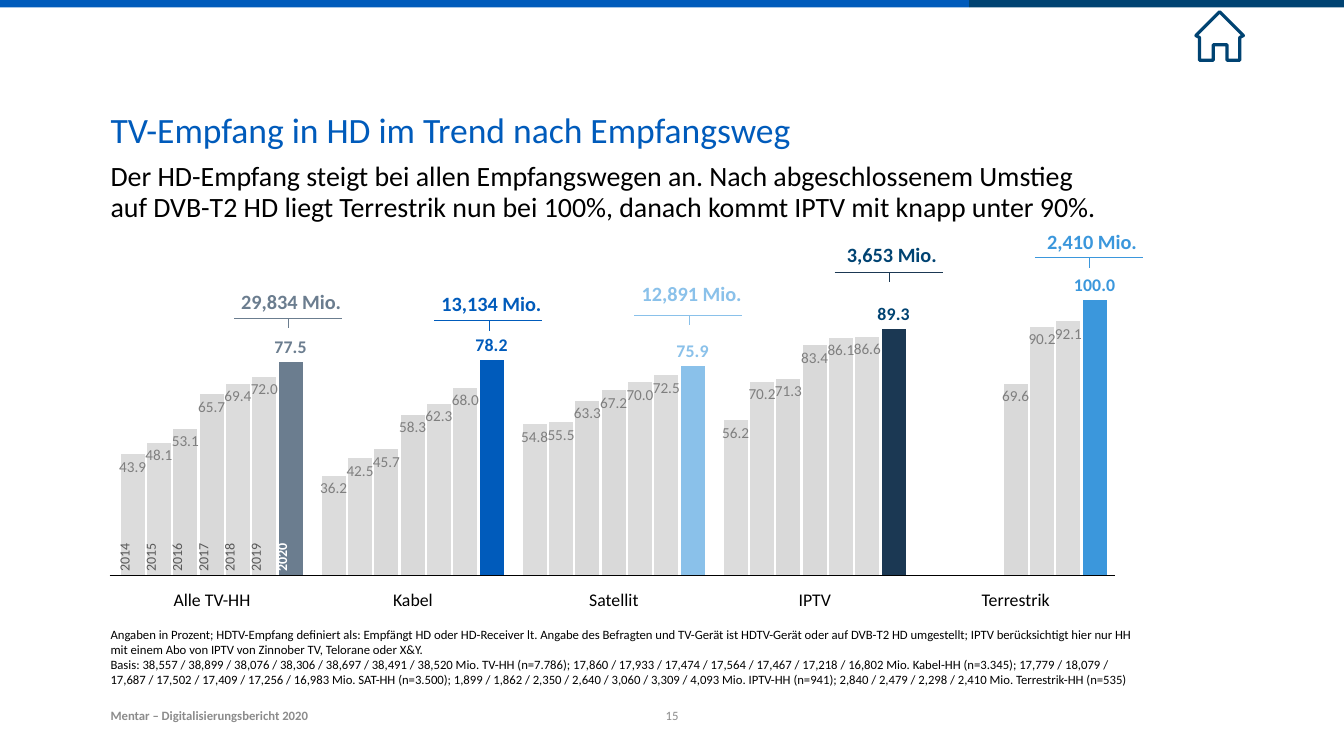
from lxml import etree
from pptx import Presentation
from pptx.chart.data import CategoryChartData
from pptx.dml.color import RGBColor
from pptx.enum.chart import XL_CHART_TYPE, XL_LABEL_POSITION
from pptx.enum.shapes import MSO_CONNECTOR, MSO_SHAPE
from pptx.enum.text import MSO_ANCHOR, PP_ALIGN
from pptx.oxml import parse_xml
from pptx.oxml.ns import nsdecls, qn
from pptx.util import Inches, Pt

FONT = "Calibri"
NO_STYLE_NO_GRID = "{2D5ABB26-0587-4C30-8999-92F81FD0307C}"
BLACK = RGBColor(0x00, 0x00, 0x00)
WHITE = RGBColor(0xFF, 0xFF, 0xFF)
BLUE = RGBColor(0x00, 0x5B, 0xBB)
NAVY = RGBColor(0x00, 0x43, 0x72)
DARK_NAVY = RGBColor(0x1B, 0x38, 0x53)
SLATE = RGBColor(0x6B, 0x7D, 0x8F)
LIGHT_BLUE = RGBColor(0x8A, 0xC1, 0xEA)
SKY_BLUE = RGBColor(0x3B, 0x97, 0xDC)
BAR_GRAY = RGBColor(0xDC, 0xDC, 0xDC)
BAR_GRAY_DARK = RGBColor(0xD9, 0xD9, 0xD9)
LABEL_GRAY = RGBColor(0x7F, 0x7F, 0x7F)
YEAR_GRAY = RGBColor(0x59, 0x59, 0x59)
FOOTER_GRAY = RGBColor(0x8C, 0x8C, 0x8C)

RECEPTION_WAYS = ["Alle TV-HH", "Kabel", "Satellit", "IPTV", "Terrestrik"]
HD_SHARES = {
    "2014": (43.9, 36.2, 54.8, 56.2, None),
    "2015": (48.1, 42.5, 55.5, 70.2, None),
    "2016": (53.1, 45.7, 63.3, 71.3, None),
    "2017": (65.7, 58.3, 67.2, 83.4, 69.6),
    "2018": (69.4, 62.3, 70.0, 86.1, 90.2),
    "2019": (72.0, 68.0, 72.5, 86.6, 92.1),
    "2020": (77.5, 78.2, 75.9, 89.3, 100.0),
}
# text, text top, line height, text colour, line colour
CALLOUTS = [
    ("29,834 Mio.", 3.11, 3.48, SLATE, SLATE),
    ("13,134 Mio.", 3.14, 3.51, BLUE, BLUE),
    ("12,891 Mio.", 3.03, 3.45, LIGHT_BLUE, LIGHT_BLUE),
    ("3,653 Mio.", 2.60, 2.98, NAVY, DARK_NAVY),
    ("2,410 Mio.", 2.46, 2.82, SKY_BLUE, SKY_BLUE),
]
SUBTITLE = (
    "Der HD-Empfang steigt bei allen Empfangswegen an. Nach abgeschlossenem Umstieg "
    "auf DVB-T2 HD liegt Terrestrik nun bei 100%, danach kommt IPTV mit knapp unter 90%."
)
FOOTNOTE = (
    "Angaben in Prozent; HDTV-Empfang definiert als: Empfängt HD oder HD-Receiver lt. Angabe des "
    "Befragten und TV-Gerät ist HDTV-Gerät oder auf DVB-T2 HD umgestellt; IPTV berücksichtigt hier "
    "nur HH mit einem Abo von IPTV von Zinnober TV, Telorane oder X&Y.\n"
    "Basis: 38,557 / 38,899 / 38,076 / 38,306 / 38,697 / 38,491 / 38,520 Mio. TV-HH (n=7.786); "
    "17,860 / 17,933 / 17,474 / 17,564 / 17,467 / 17,218 / 16,802 Mio. Kabel-HH (n=3.345); "
    "17,779 / 18,079 / 17,687 / 17,502 / 17,409 / 17,256 / 16,983 Mio. SAT-HH (n=3.500); "
    "1,899 / 1,862 / 2,350 / 2,640 / 3,060 / 3,309 / 4,093 Mio. IPTV-HH (n=941); "
    "2,840 / 2,479 / 2,298 / 2,410 Mio. Terrestrik-HH (n=535)"
)


def fill_text(shape, text, size, color, bold=False, anchor=MSO_ANCHOR.TOP, align=PP_ALIGN.LEFT):
    """Put one formatted paragraph into a shape without insets and return it."""
    frame = shape.text_frame
    frame.word_wrap = True
    frame.vertical_anchor = anchor
    frame.margin_left = frame.margin_top = frame.margin_right = frame.margin_bottom = 0
    paragraph = frame.paragraphs[0]
    paragraph.text = text
    paragraph.alignment = align
    paragraph.font.name = FONT
    paragraph.font.size = Pt(size)
    paragraph.font.bold = bold
    paragraph.font.color.rgb = color
    return paragraph


def add_line(shapes, start, end, color, width):
    line = shapes.add_connector(
        MSO_CONNECTOR.STRAIGHT, *(Inches(value) for value in (*start, *end)))
    line.line.color.rgb = color
    line.line.width = Pt(width)
    etree.SubElement(line._element.spPr, qn("a:effectLst"))


presentation = Presentation()
presentation.slide_width = Inches(14.7)
presentation.slide_height = Inches(8.27)
slide = presentation.slides.add_slide(presentation.slide_layouts[5])
shapes = slide.shapes

# Top band
for left, width, color in ((0, 10.6, BLUE), (10.6, 4.1, NAVY)):
    band = shapes.add_shape(
        MSO_SHAPE.RECTANGLE, Inches(left), 0, Inches(width), Inches(0.08))
    band.shadow.inherit = False
    band.fill.solid()
    band.fill.fore_color.rgb = color
    band.line.fill.background()

# Chart
chart_data = CategoryChartData(number_format="0.0")
chart_data.categories = RECEPTION_WAYS
for year, shares in HD_SHARES.items():
    chart_data.add_series(year, shares)
chart = shapes.add_chart(
    XL_CHART_TYPE.COLUMN_CLUSTERED, Inches(0.88), Inches(2.49), Inches(12.45), Inches(4.49),
    chart_data).chart
chart.has_legend = False
chart.has_title = False
chart.font.name = FONT
chart.font.size = Pt(18)
chart.font.color.rgb = BLACK
chart.category_axis.visible = False
chart.value_axis.visible = False
chart.value_axis.has_major_gridlines = False
chart.value_axis.minimum_scale = 0
chart.value_axis.maximum_scale = 120
plot = chart.plots[0]
plot.gap_width = 80
plot.overlap = -10
plot.vary_by_categories = False

plot_area = chart._chartSpace.chart.plotArea
for layout in plot_area.findall(qn("c:layout")):
    plot_area.remove(layout)
plot_area.insert(0, parse_xml(
    f'<c:layout {nsdecls("c")}><c:manualLayout><c:layoutTarget val="inner"/>'
    '<c:xMode val="edge"/><c:yMode val="edge"/><c:x val="0.027"/><c:y val="0.041"/>'
    '<c:w val="0.883"/><c:h val="0.807"/></c:manualLayout></c:layout>'))

for series in plot.series:
    latest = series.name == "2020"
    series.format.fill.solid()
    series.format.fill.fore_color.rgb = (
        BLUE if latest else BAR_GRAY_DARK if series.name in ("2016", "2017") else BAR_GRAY)
    labels = series.data_labels
    labels.show_value = True
    labels.number_format = "0.0" if latest else "#,##0.0"
    labels.number_format_is_linked = False
    labels.position = XL_LABEL_POSITION.OUTSIDE_END if latest else XL_LABEL_POSITION.INSIDE_END
    labels.font.name = FONT
    labels.font.size = Pt(14 if latest else 12)
    labels.font.bold = latest
    labels.font.color.rgb = BLUE if latest else LABEL_GRAY

for index, (_, _, _, text_color, bar_color) in enumerate(CALLOUTS):
    point = plot.series[-1].points[index]
    point.format.fill.solid()
    point.format.fill.fore_color.rgb = bar_color
    point_label = point.data_label
    point_label.font.name = FONT
    point_label.font.size = Pt(14)
    point_label.font.bold = True
    point_label.font.color.rgb = text_color
    point_label.position = XL_LABEL_POSITION.OUTSIDE_END

# Title and texts
title = shapes.title
title.left, title.top, title.width, title.height = (
    Inches(value) for value in (1.21, 1.18, 12.28, 0.59))
fill_text(title, "TV-Empfang in HD im Trend nach Empfangsweg", 28, BLUE)
subtitle = shapes.add_textbox(Inches(1.21), Inches(1.77), Inches(10.95), Inches(0.79))
fill_text(subtitle, SUBTITLE, 22, BLACK).line_spacing = Pt(24)
footnote = shapes.add_textbox(Inches(1.21), Inches(6.84), Inches(11.27), Inches(0.68))
fill_text(footnote, FOOTNOTE, 10, BLACK, anchor=MSO_ANCHOR.BOTTOM)
footer = shapes.add_textbox(Inches(1.21), Inches(7.68), Inches(4.18), Inches(0.23))
fill_text(footer, "Mentar – Digitalisierungsbericht 2020", 10, FOOTER_GRAY, True, MSO_ANCHOR.BOTTOM)
page_number = shapes.add_textbox(Inches(7.19), Inches(7.66), Inches(0.32), Inches(0.25))
fill_text(page_number, "15", 10, FOOTER_GRAY, False, MSO_ANCHOR.BOTTOM, PP_ALIGN.CENTER)

# Base line, years and reception ways
add_line(shapes, (1.2, 6.29), (12.2, 6.29), BLACK, 0.25)
for labels, left, top, width, height in (
        (list(HD_SHARES), 1.32, 5.8, 2.01, 0.59), (RECEPTION_WAYS, 1.22, 6.3, 10.99, 0.38)):
    table = shapes.add_table(
        1, len(labels), Inches(left), Inches(top), Inches(width), Inches(height)).table
    table.first_row = table.horz_banding = False
    table._tbl.tblPr.find(qn("a:tableStyleId")).text = NO_STYLE_NO_GRID
    for cell, label in zip(table.iter_cells(), labels):
        cell.fill.background()
        cell.margin_left = cell.margin_top = cell.margin_right = cell.margin_bottom = 0
        paragraph = cell.text_frame.paragraphs[0]
        paragraph.text = label
        paragraph.alignment = PP_ALIGN.CENTER
        paragraph.font.name = FONT
        if label in HD_SHARES:
            cell.vertical_anchor = MSO_ANCHOR.MIDDLE
            cell._tc.get_or_add_tcPr().set("vert", "vert270")
            paragraph.line_spacing = Pt(10)
            paragraph.font.size = Pt(11)
            paragraph.font.bold = label == "2020"
            paragraph.font.color.rgb = WHITE if label == "2020" else YEAR_GRAY
        else:
            cell.vertical_anchor = MSO_ANCHOR.BOTTOM
            cell.margin_top = Inches(0.15)
            paragraph.font.size = Pt(14)
            paragraph.font.color.rgb = BLACK

# Household callouts
for index, (text, top, line_top, text_color, line_color) in enumerate(CALLOUTS):
    left = 2.52 + 2.19 * index
    callout = shapes.add_group_shape().shapes
    box = callout.add_textbox(Inches(left), Inches(top + 0.05), Inches(1.33), Inches(0.27))
    fill_text(box, text, 16, text_color, True, align=PP_ALIGN.CENTER)
    add_line(callout, (left + 0.04, line_top), (left + 1.22, line_top), line_color, 0.75)
    add_line(callout, (left + 0.64, line_top), (left + 0.64, line_top + 0.11), line_color, 0.75)

# Home icon
house_points = [(Inches(x), Inches(y)) for x, y in (
    (13.34, 0.13), (13.6, 0.39), (13.56, 0.41), (13.56, 0.66), (13.42, 0.66), (13.42, 0.49),
    (13.27, 0.49), (13.27, 0.66), (13.12, 0.66), (13.12, 0.41), (13.08, 0.39))]
builder = shapes.build_freeform(*house_points[0])
builder.add_line_segments(house_points[1:], close=True)
house = builder.convert_to_shape()
house.shadow.inherit = False
house.fill.background()
house.line.color.rgb = NAVY
house.line.width = Pt(2.5)
etree.SubElement(house.line._get_or_add_ln(), qn("a:round"))

presentation.save("out.pptx")
